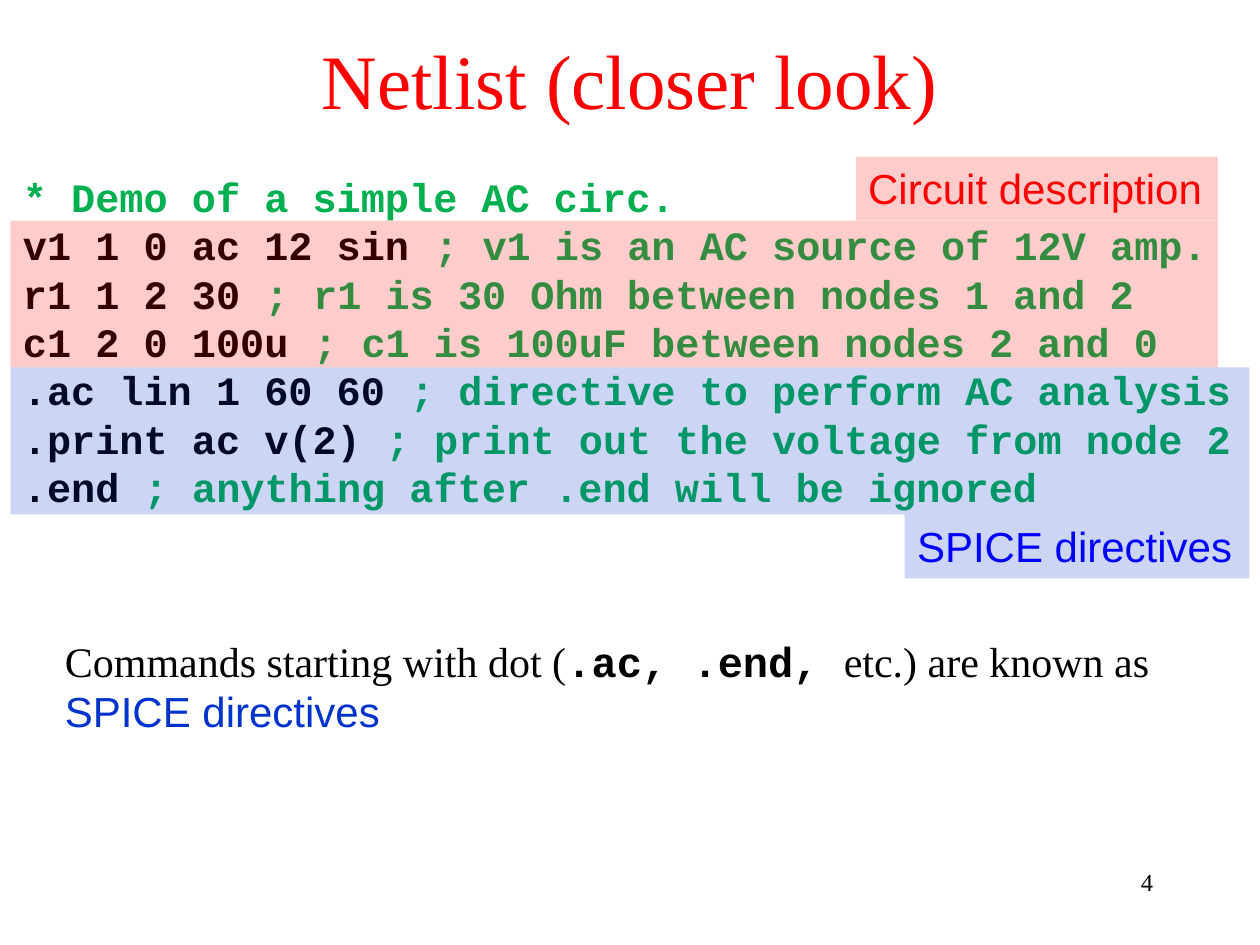
from pptx import Presentation
from pptx.dml.color import RGBColor
from pptx.enum.shapes import MSO_SHAPE
from pptx.enum.text import MSO_ANCHOR, PP_ALIGN
from pptx.oxml.ns import qn
from pptx.util import Pt
from lxml import etree

RECT = MSO_SHAPE.RECTANGLE
TOP, MIDDLE = MSO_ANCHOR.TOP, MSO_ANCHOR.MIDDLE
LEFT, CENTER, RIGHT = PP_ALIGN.LEFT, PP_ALIGN.CENTER, PP_ALIGN.RIGHT
SERIF, SANS, MONO = "Times New Roman", "Arial", "Courier New"
COLORS = {"black": "000000", "red": "FF0000", "green": "00B050",
          "navy": "0033CC", "blue": "0000FF"}


def add_run(p, text, size=24, font=SERIF, color="black", bold=False):
    r = p.add_run()
    r.text = text
    r.font.size, r.font.name, r.font.bold = Pt(size), font, bold
    r.font.color.rgb = RGBColor.from_string(COLORS[color])


class SlideBuilder:
    """Holds the current slide and draws each kind of element on it."""

    def __init__(self, prs):
        self.s = prs.slides.add_slide(prs.slide_layouts[6])

    def text(self, x, y, w, h, paragraphs, align=LEFT, anchor=TOP, spacing=None):
        """Each paragraph is a list of (text, format) pairs."""
        tf = self.s.shapes.add_textbox(Pt(x), Pt(y), Pt(w), Pt(h)).text_frame
        tf.word_wrap = True
        tf.vertical_anchor = anchor
        for i, runs in enumerate(paragraphs):
            p = tf.add_paragraph() if i else tf.paragraphs[0]
            p.alignment = align
            p.line_spacing = spacing
            for text, fmt in runs:
                add_run(p, text, **fmt)

    def band(self, x, y, w, h, color, alpha=20):
        sp = self.s.shapes.add_shape(RECT, Pt(x), Pt(y), Pt(w), Pt(h))
        sp.shadow.inherit = False
        sp.line.fill.background()
        sp.fill.solid()
        sp.fill.fore_color.rgb = RGBColor.from_string(COLORS[color])
        clr = sp.fill._xPr.find(qn("a:solidFill"))[0]
        etree.SubElement(clr, qn("a:alpha"), val=str(alpha * 1000))
        return sp

    def label(self, x, y, w, h, text, fill, color):
        tf = self.band(x, y, w, h, fill).text_frame
        tf.word_wrap = False
        tf.vertical_anchor = TOP
        p = tf.paragraphs[0]
        p.alignment = LEFT
        add_run(p, text, font=SANS, color=color)


def main():
    prs = Presentation()
    prs.slide_width, prs.slide_height = Pt(720), Pt(540)
    slide = SlideBuilder(prs)

    # Title
    slide.text(54, 0, 612, 90, [[("Netlist (closer look)", dict(size=44, color="red"))]],
               align=CENTER, anchor=MIDDLE)

    # Netlist: statement and comment on each line
    netlist = [
        ("", "* Demo of a simple AC circ."),
        ("v1 1 0 ac 12 sin ", "; v1 is an AC source of 12V amp."),
        ("r1 1 2 30 ", "; r1 is 30 Ohm between nodes 1 and 2"),
        ("c1 2 0 100u ", "; c1 is 100uF between nodes 2 and 0"),
        (".ac lin 1 60 60 ", "; directive to perform AC analysis"),
        (".print ac v(2) ", "; print out the voltage from node 2"),
        (".end ", "; anything after .end will be ignored"),
    ]
    code = dict(size=23, font=MONO, bold=True)
    comment = dict(code, color="green")
    lines = [[(text, fmt) for text, fmt in ((cmd, code), (note, comment)) if text]
             for cmd, note in netlist]
    slide.text(6, 95, 768, 202, lines, spacing=Pt(27.6))

    # Explanation
    slide.text(30, 359.5, 666, 65.5, [[
        ("Commands starting with dot (", {}),
        (".ac, .end, ", dict(font=MONO, bold=True)),
        ("etc.) are known as ", {}),
        ("SPICE directives", dict(font=SANS, color="navy")),
    ]])

    # Highlight bands, each with a label flush to its right edge
    left, top, band_h, label_h = 6, 126, 84, 36.5
    middle, bottom = top + band_h, top + 2 * band_h
    circuit_w, directive_w = 690, 708
    slide.band(left, top, circuit_w, band_h, "red")
    slide.label(left + circuit_w - 207, top - label_h, 207, label_h,
                "Circuit description", "red", "red")
    slide.band(left, middle, directive_w, band_h, "navy")
    slide.label(left + directive_w - 197, bottom, 197, label_h,
                "SPICE directives", "navy", "blue")

    # Slide number
    slide.text(516, 492, 150, 36, [[("4", dict(size=14))]], align=RIGHT)

    prs.save("out.pptx")


if __name__ == "__main__":
    main()
